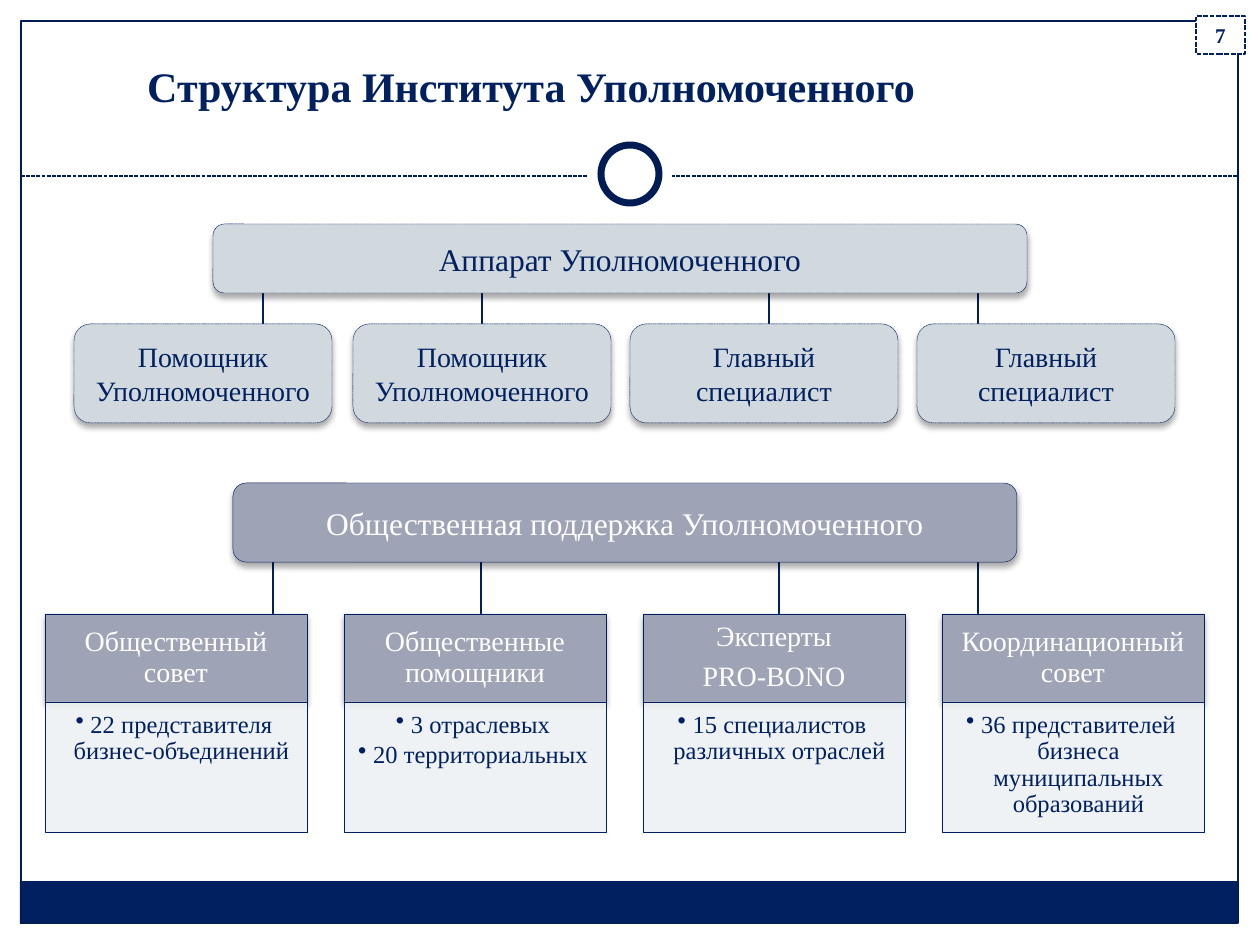
from pptx import Presentation
from pptx.dml.color import RGBColor
from pptx.enum.dml import MSO_LINE as Dash
from pptx.enum.shapes import MSO_CONNECTOR as Link, MSO_SHAPE as Kind
from pptx.enum.text import MSO_ANCHOR as Anchor, PP_ALIGN as Align
from pptx.oxml import parse_xml
from pptx.oxml.ns import nsdecls, qn
from pptx.util import Pt

SCALE = 914400 / 126  # EMU per px
NAVY = RGBColor(0x00, 0x20, 0x60)
DEEP = RGBColor(0x00, 0x1C, 0x55)
PALE = RGBColor(0xD1, 0xD9, 0xDF)
GRAY = RGBColor(0x9E, 0xA4, 0xB6)
MIST = RGBColor(0xEE, 0xF1, 0xF3)
WHITE = RGBColor(0xFF, 0xFF, 0xFF)
DOTS = Dash.SQUARE_DOT

SHADOW = (
    f'<a:outerShdw {nsdecls("a")} blurRad="44450" dist="27940" dir="5400000" '
    'rotWithShape="0"><a:srgbClr val="000000"><a:alpha val="32000"/>'
    '</a:srgbClr></a:outerShdw>'
)


def emu(*vals):
    return [round(v * SCALE) for v in vals]


class Deck:
    font = "Times New Roman"

    def __init__(self, slide):
        self.slide = slide
        self.shapes = slide.shapes

    def stroke(self, line, color, width, dash=None):
        line.color.rgb = color
        line.width = Pt(width)
        if dash:
            line.dash_style = dash

    def shape(self, kind, box, fill=None, line=None, width=0.25, dash=None,
              shade=False, alpha=None):
        item = self.shapes.add_shape(kind, *emu(*box))
        item.shadow.inherit = False
        if fill is None:
            item.fill.background()
        else:
            item.fill.solid()
            item.fill.fore_color.rgb = fill
        if alpha:
            color = item.element.spPr.find(qn("a:solidFill"))[0]
            color.append(parse_xml(
                f'<a:alpha {nsdecls("a")} val="{alpha * 1000}"/>'))
        if line is None:
            item.line.fill.background()
        else:
            self.stroke(item.line, line, width, dash)
        if shade:
            item.element.spPr.find(qn("a:effectLst")).append(
                parse_xml(SHADOW))
        return item

    def line(self, start, end, color=NAVY, dash=None):
        item = self.shapes.add_connector(
            Link.STRAIGHT, *emu(*start, *end))
        self.stroke(item.line, color, 0.75, dash)
        item.element.spPr.append(
            parse_xml(f'<a:effectLst {nsdecls("a")}/>'))
        return item

    def label(self, item, lines, size, color=NAVY, bold=False, space=None,
              after=0, inset=None, anchor=Anchor.MIDDLE, bullet=False):
        frame = item.text_frame
        frame.word_wrap = True
        frame.vertical_anchor = anchor
        if inset:
            (frame.margin_left, frame.margin_top,
             frame.margin_right, frame.margin_bottom) = emu(*inset)
        for i, text in enumerate(lines):
            para = frame.add_paragraph() if i else frame.paragraphs[0]
            para.alignment = Align.CENTER
            para.space_after = Pt(after)
            if space:
                para.line_spacing = space
            if bullet:
                self.bullet(para)
            run = para.add_run()
            run.text = text
            run.font.name = self.font
            run.font.size = Pt(size)
            run.font.bold = bold
            run.font.color.rgb = color

    def bullet(self, para):
        props = para._p.get_or_add_pPr()
        gap = emu(15)[0]
        props.set("marL", str(gap))
        props.set("indent", str(-gap))
        props.append(parse_xml(f'<a:buChar {nsdecls("a")} char="•"/>'))

    def text(self, box, lines, size, **style):
        self.label(self.shapes.add_textbox(*emu(*box)), lines, size, **style)

    def round(self, box, text, size, fill, color=NAVY, dash=None):
        item = self.shape(Kind.ROUNDED_RECTANGLE, box, fill, NAVY,
                          dash=dash, shade=True)
        self.label(item, [text], size, color)
        return item

    def card(self, left, head, notes):
        top = self.shape(Kind.RECTANGLE, (left, 614, 262, 88), GRAY, NAVY,
                         shade=True)
        self.label(top, head, 16, WHITE, space=0.9, after=5.6,
                   inset=(15, 9, 15, 9))
        body = self.shape(Kind.RECTANGLE, (left, 702, 262, 130), MIST, NAVY,
                          alpha=90)
        self.label(body, notes, 14, space=0.9, after=2.1,
                   inset=(10, 10, 14, 15), anchor=Anchor.TOP, bullet=True)


def main():
    prs = Presentation()
    prs.slide_width, prs.slide_height = emu(1260, 945)
    deck = Deck(prs.slides.add_slide(prs.slide_layouts[6]))

    # Frame, footer band and ring
    deck.shape(Kind.RECTANGLE, (20, 881, 1218, 43), NAVY)
    deck.shape(Kind.RECTANGLE, (21, 21, 1217, 902), None, DEEP, 0.75)
    deck.line((21, 176), (1238, 176), DEEP, DOTS)
    deck.shape(Kind.OVAL, (588, 132, 84, 84), WHITE)
    deck.shape(Kind.OVAL, (601, 145, 58, 58), WHITE, DEEP, 4)

    # Branch lines, behind the boxes
    for x in (273, 481, 779, 978):
        deck.line((x, 562), (x, 631))
    stems = [deck.line((x, 284), (x, 324)) for x in (263, 482, 769, 978)]

    # Title
    deck.text((35, 54, 992, 63), ["Структура Института Уполномоченного"],
              24, bold=True)

    # Office staff
    deck.round((213, 224, 814, 69), "Аппарат Уполномоченного", 18, PALE,
               dash=DOTS)
    staff = [
        (74, 258, "Помощник Уполномоченного"),
        (353, 258, "Помощник Уполномоченного"),
        (630, 268, "Главный специалист"),
        (917, 258, "Главный специалист"),
    ]
    boxes = [deck.round((x, 324, w, 99), text, 16, PALE, dash=DOTS)
             for x, w, text in staff]
    stems[1].end_connect(boxes[1], 0)

    # Public support
    deck.round((233, 483, 784, 79), "Общественная поддержка Уполномоченного",
               18, GRAY, WHITE)
    cards = [
        (["Общественный совет"], ["22 представителя бизнес-объединений"]),
        (["Общественные помощники"],
         ["3 отраслевых", "20 территориальных"]),
        (["Эксперты", "PRO-BONO"], ["15 специалистов различных отраслей"]),
        (["Координационный совет"],
         ["36 представителей бизнеса муниципальных образований"]),
    ]
    for i, (head, notes) in enumerate(cards):
        deck.card(45 + 299 * i, head, notes)

    # Page number
    page = deck.shape(Kind.RECTANGLE, (1196, 16, 49, 38), WHITE, NAVY, 0.9,
                      DOTS)
    deck.label(page, ["7"], 12, bold=True)

    prs.save("out.pptx")


if __name__ == "__main__":
    main()
